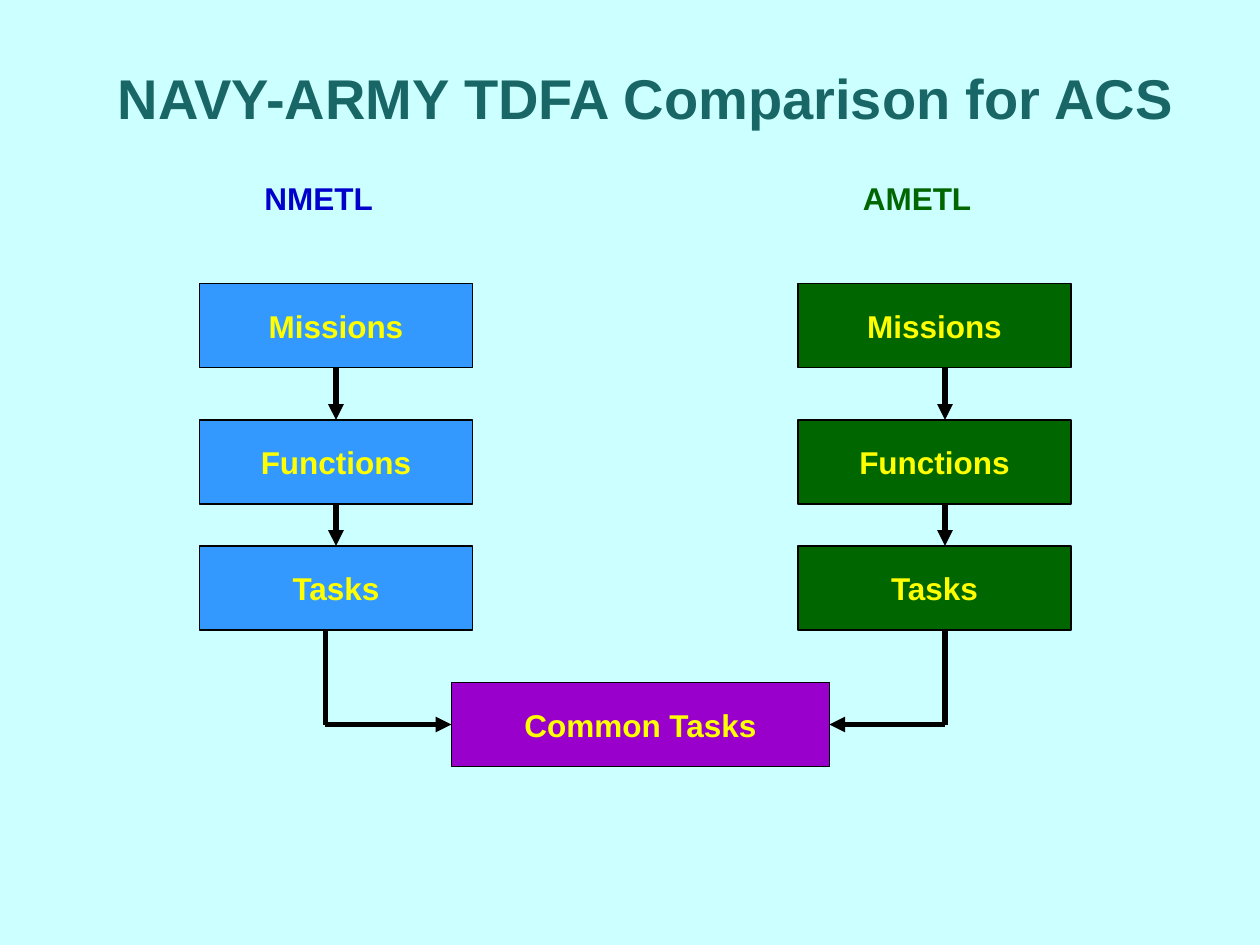
from dataclasses import dataclass
from itertools import pairwise

from lxml.etree import SubElement
from pptx import Presentation
from pptx.dml.color import RGBColor
from pptx.enum.shapes import MSO_CONNECTOR, MSO_SHAPE
from pptx.enum.text import MSO_ANCHOR, MSO_AUTO_SIZE, PP_ALIGN
from pptx.oxml.ns import qn
from pptx.slide import Slide
from pptx.text.text import TextFrame
from pptx.util import Pt

BOX_WIDTH = 156
BOX_HEIGHT = 48
LEVELS = {"Missions": 162, "Functions": 240, "Tasks": 312}
COMMON_LEFT, COMMON_TOP, COMMON_WIDTH = 258, 390, 216
JOIN_Y = COMMON_TOP + BOX_HEIGHT / 2


@dataclass(frozen=True)
class Service:
    heading: str
    heading_left: float
    heading_width: float
    heading_color: str
    box_left: float
    box_color: str
    arrow_x: float
    elbow_x: float
    common_edge: float


SERVICES = [
    Service("NMETL", 144, 132, "0000CC", 114, "3399FF", 192, 186, COMMON_LEFT),
    Service("AMETL", 486, 119.5, "006600", 456, "006600", 540, 540,
            COMMON_LEFT + COMMON_WIDTH),
]


def color(value: str) -> RGBColor:
    return RGBColor.from_string(value)


def write(frame: TextFrame, text: str, size: float, ink: str,
          align: PP_ALIGN) -> None:
    paragraph = frame.paragraphs[0]
    paragraph.alignment = align
    run = paragraph.add_run()
    run.text = text
    run.font.name = "Arial"
    run.font.size = Pt(size)
    run.font.bold = True
    run.font.color.rgb = color(ink)


def add_label(slide: Slide, text: str, left: float, top: float, width: float,
              height: float, size: float, ink: str,
              align: PP_ALIGN = PP_ALIGN.LEFT) -> TextFrame:
    frame = slide.shapes.add_textbox(
        Pt(left), Pt(top), Pt(width), Pt(height)).text_frame
    frame.word_wrap = True
    frame.auto_size = MSO_AUTO_SIZE.SHAPE_TO_FIT_TEXT
    write(frame, text, size, ink, align)
    return frame


def add_box(slide: Slide, text: str, left: float, top: float, width: float,
            fill: str) -> None:
    box = slide.shapes.add_shape(
        MSO_SHAPE.RECTANGLE, Pt(left), Pt(top), Pt(width), Pt(BOX_HEIGHT))
    box.shadow.inherit = False
    box.fill.solid()
    box.fill.fore_color.rgb = color(fill)
    box.line.color.rgb = color("000000")
    box.line.width = Pt(0.75)
    box.text_frame.word_wrap = False
    box.text_frame.vertical_anchor = MSO_ANCHOR.MIDDLE
    write(box.text_frame, text, 18, "FFFF00", PP_ALIGN.CENTER)


def add_line(slide: Slide, x1: float, y1: float, x2: float, y2: float,
             arrow: bool = True) -> None:
    line = slide.shapes.add_connector(
        MSO_CONNECTOR.STRAIGHT, Pt(x1), Pt(y1), Pt(x2), Pt(y2))
    line.line.color.rgb = color("000000")
    line.line.width = Pt(3)
    if arrow:
        SubElement(line.line._get_or_add_ln(), qn("a:tailEnd"), type="triangle")
    SubElement(line._element.spPr, qn("a:effectLst"))


def add_service(slide: Slide, service: Service) -> None:
    add_label(slide, service.heading, service.heading_left, 99,
              service.heading_width, 36, 18, service.heading_color)
    for level, top in LEVELS.items():
        add_box(slide, level, service.box_left, top, BOX_WIDTH, service.box_color)
    for upper, lower in pairwise(LEVELS.values()):
        add_line(slide, service.arrow_x, upper + BOX_HEIGHT,
                 service.arrow_x, lower)
    add_line(slide, service.elbow_x, LEVELS["Tasks"] + BOX_HEIGHT,
             service.elbow_x, JOIN_Y, arrow=False)
    add_line(slide, service.elbow_x, JOIN_Y, service.common_edge, JOIN_Y)


def main() -> None:
    deck = Presentation()
    deck.slide_width, deck.slide_height = Pt(720), Pt(540)
    slide = deck.slides.add_slide(deck.slide_layouts[6])
    slide.background.fill.solid()
    slide.background.fill.fore_color.rgb = color("CCFFFF")

    title = add_label(slide, "NAVY-ARMY TDFA Comparison for ACS", 0, 33, 720, 45,
                      32, "196666", PP_ALIGN.CENTER)
    title.margin_left = Pt(25)
    add_box(slide, "Common Tasks", COMMON_LEFT, COMMON_TOP, COMMON_WIDTH, "9900CC")
    for service in SERVICES:
        add_service(slide, service)
    deck.save("out.pptx")


if __name__ == "__main__":
    main()
